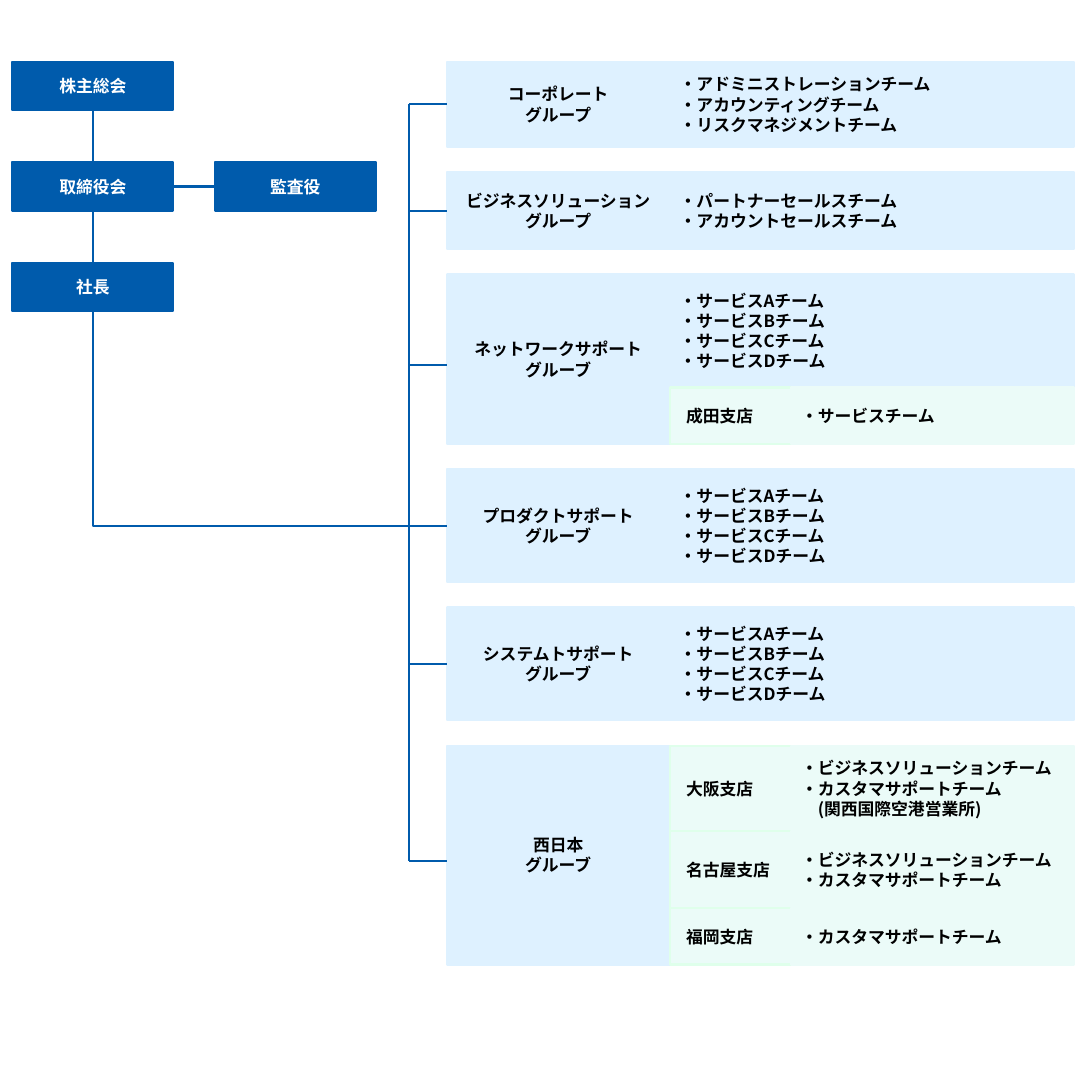
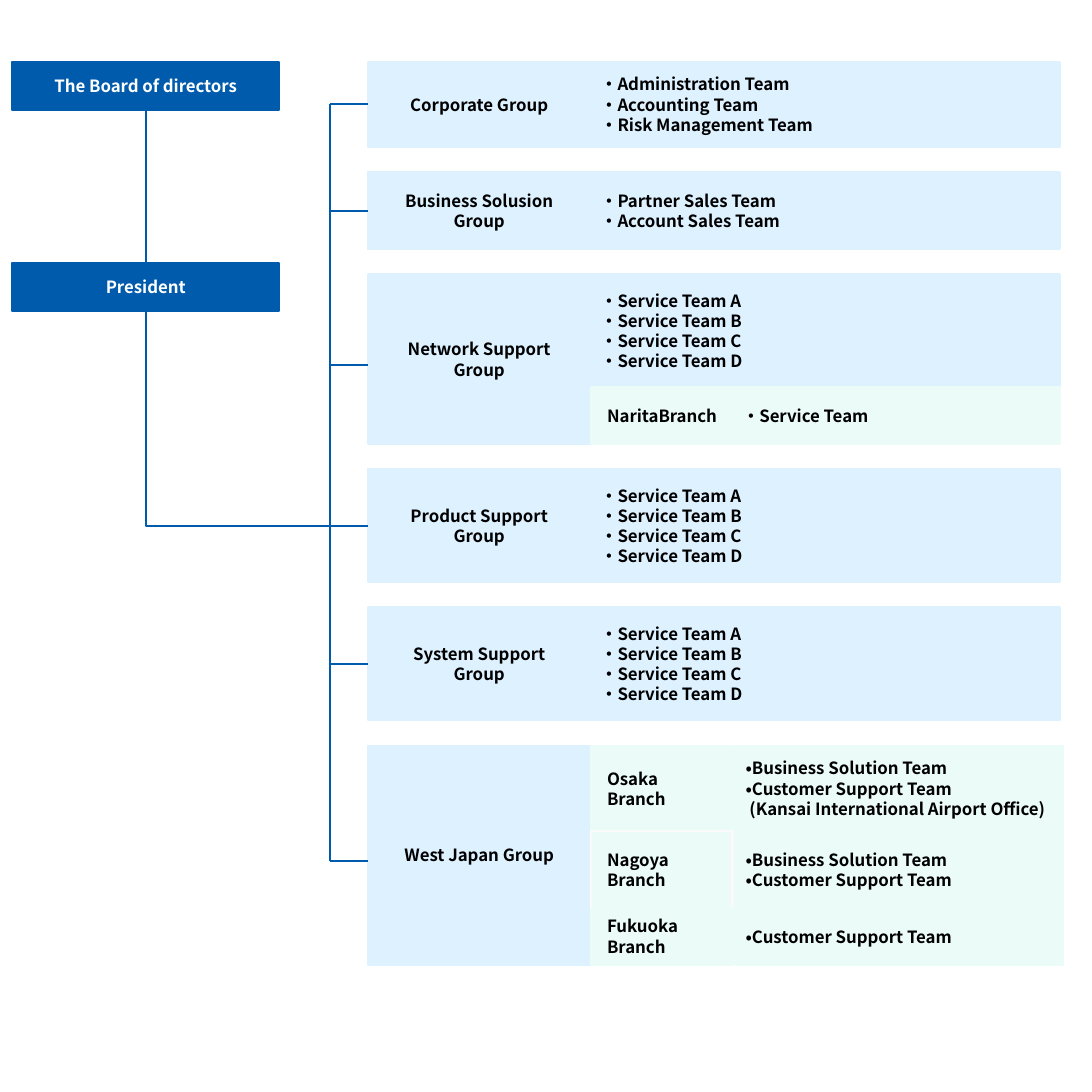
from lxml import etree
from pptx import Presentation
from pptx.dml.color import RGBColor
from pptx.enum import shapes, text
from pptx.oxml import ns
from pptx.util import Pt

FONT = "Noto Sans CJK JP"
NAVY, SKY, MINT, PALE = "005BAC", "DEF1FF", "EBFBF8", "FAFAFA"
LIME, WHITE, BLACK = "DFFFEB", "FFFFFF", "000000"

TOP, LEFT = 43.2, 8.6
LEADH, STEP = 33.8, 70.6     # head boxes: height, row pitch
GROUPW, GAP, STUB = 156.2, 17.7, 26.3
TALL = {1: 39.6, 2: 54, 3: 59.8, 4: 79.2}   # block height by team lines


def paint(fmt, hue):
    """Give a fill or a line one solid colour."""
    fill = getattr(fmt, "fill", fmt)
    fill.solid()
    fill.fore_color.rgb = RGBColor.from_string(hue)


def box(page, x, y, w, h, lines, hue, edge=None, ink=BLACK, mid=False, pad=7.2):
    """Draw a rectangle with one paragraph for each line."""
    item = page.shapes.add_shape(
        shapes.MSO_SHAPE.RECTANGLE, Pt(x), Pt(y), Pt(w), Pt(h))
    item.shadow.inherit = False
    paint(item.fill, hue)
    paint(item.line, edge or hue)
    item.line.width = Pt(1.5)
    frame = item.text_frame
    frame.word_wrap = True
    frame.margin_left = Pt(pad)
    frame.vertical_anchor = text.MSO_ANCHOR.MIDDLE
    for i, line in enumerate(lines):
        para = frame.add_paragraph() if i else frame.paragraphs[0]
        para.alignment = text.PP_ALIGN.CENTER if mid else text.PP_ALIGN.LEFT
        run = para.add_run()
        run.text = line
        run.font.name, run.font.size, run.font.bold = FONT, Pt(11.8), True
        run.font.color.rgb = RGBColor.from_string(ink)
        etree.SubElement(run.font._element, ns.qn("a:ea"), typeface=FONT)
    return item


# Head: text, column, row. Group: name lines, then blocks of
# (branch lines, branch edge, team lines), then drop of its stub.
JA_SERV = [f"・サービス{c}チーム" for c in "ABCD"]
EN_SERV = [f"・Service Team {c}" for c in "ABCD"]
JA_WEST = ["・ビジネスソリューションチーム", "・カスタマサポートチーム"]
EN_WEST = ["•Business Solution Team", "•Customer Support Team"]

PAGES = [
    dict(
        x=313.2, team=283.7, branch=85, slit=0, lead=113,
        heads=[("株主総会", 0, 0), ("取締役会", 0, 1), ("社長", 0, 2),
               ("監査役", 1, 1)],
        groups=[
            (["コーポレート", "グループ"],
             [([], None, ["・アドミニストレーションチーム",
                          "・アカウンティングチーム",
                          "・リスクマネジメントチーム"])], 0),
            (["ビジネスソリューション", "グループ"],
             [([], None, ["・パートナーセールスチーム",
                          "・アカウントセールスチーム"])], 0),
            (["ネットワークサポート", "グルーブ"],
             [([], None, JA_SERV),
              (["成田支店"], LIME, ["・サービスチーム"])], 4),
            (["プロダクトサポート", "グルーブ"], [([], None, JA_SERV)], 0),
            (["システムトサポート", "グルーブ"], [([], None, JA_SERV)], 0),
            (["西日本", "グルーブ"],
             [(["大阪支店"], LIME, JA_WEST + ["\u3000(関西国際空港営業所)".replace("\u3000", "　")]),
              (["名古屋支店"], LIME, JA_WEST),
              (["福岡支店"], LIME, JA_WEST[1:])], 4),
        ]),
    dict(
        x=257.8, team=329, branch=99.4, slit=2.2, lead=187.2,
        heads=[("The Board of directors", 0, 0), ("President", 0, 2)],
        groups=[
            (["Corporate Group"],
             [([], None, ["・Administration Team", "・Accounting Team",
                          "・Risk Management Team"])], 0),
            (["Business Solusion", "Group"],
             [([], None, ["・Partner Sales Team", "・Account Sales Team"])], 0),
            (["Network Support", "Group"],
             [([], None, EN_SERV),
              (["NaritaBranch"], MINT, ["・Service Team"])], 4),
            (["Product Support", "Group"], [([], None, EN_SERV)], 0),
            (["System Support", "Group"], [([], None, EN_SERV)], 0),
            (["West Japan Group"],
             [(["Osaka", "Branch"], MINT,
               EN_WEST + [" (Kansai International Airport Office)"]),
              (["Nagoya Branch"], PALE, EN_WEST),
              (["Fukuoka Branch"], MINT, EN_WEST[1:])], 4),
        ]),
]

deck = Presentation()
deck.slide_width = deck.slide_height = Pt(765.4)

for data in PAGES:
    page = deck.slides.add_slide(deck.slide_layouts[6])
    wires = []

    # Head boxes, joined down the first column and across to the second
    heads = {}
    for name, col, row in data["heads"]:
        heads[col, row] = box(
            page, LEFT + col * 141.9, TOP + row * STEP, data["lead"], LEADH,
            [name], NAVY, ink=WHITE, mid=True)
    chain = [item for (col, row), item in heads.items() if col == 0]
    joins = [(a, 2, b, 0) for a, b in zip(chain, chain[1:])]
    if (1, 1) in heads:
        joins.append((heads[0, 1], 3, heads[1, 1], 1))
    for a, i, b, j in joins:
        wire = page.shapes.add_connector(shapes.MSO_CONNECTOR.STRAIGHT, 0, 0, 0, 0)
        wire.begin_connect(a, i)
        wire.end_connect(b, j)
        wires.append(wire)

    # Groups with their teams and branches, each with a stub to the trunk
    x, y = data["x"], TOP
    trunk = x - STUB
    groups, stubs = [], []
    for names, blocks, drop in data["groups"]:
        high = sum(TALL[len(teams)] for _, _, teams in blocks)
        group = box(page, x, y, GROUPW, high, names, SKY, mid=True)
        groups.append(group)
        stub = y + high / 2 + drop
        stubs.append(stub)
        wire = page.shapes.add_connector(
            shapes.MSO_CONNECTOR.STRAIGHT, Pt(trunk), Pt(stub), Pt(x), Pt(stub))
        if not drop:
            wire.end_connect(group, 1)
        wires.append(wire)
        slit = data["slit"] if len(blocks) > 2 else 0
        for branch, edge, teams in blocks:
            tall, start, wide, hue = TALL[len(teams)], x + GROUPW, data["team"], SKY
            if branch:
                hue = MINT
                box(page, start, y, data["branch"], tall, branch, hue, edge, pad=11.5)
                start += data["branch"] + slit
                wide -= data["branch"]
            box(page, start, y, wide, tall, teams, hue)
            y += tall
        y += GAP

    wires.append(page.shapes.add_connector(
        shapes.MSO_CONNECTOR.STRAIGHT,
        Pt(trunk), Pt(stubs[0]), Pt(trunk), Pt(stubs[-1])))

    # One-bend line from the product group to the president
    bend = page.shapes.add_connector(shapes.MSO_CONNECTOR.ELBOW, 0, 0, 0, 0)
    bend.begin_connect(groups[3], 1)
    bend.end_connect(heads[0, 2], 2)
    bend._element.spPr.find(ns.qn("a:prstGeom")).set("prst", "bentConnector2")
    wires.append(bend)

    for wire in wires:
        paint(wire.line, NAVY)
        wire.line.width = Pt(1.5)
        etree.SubElement(wire._element.spPr, ns.qn("a:effectLst"))

deck.save("out.pptx")
